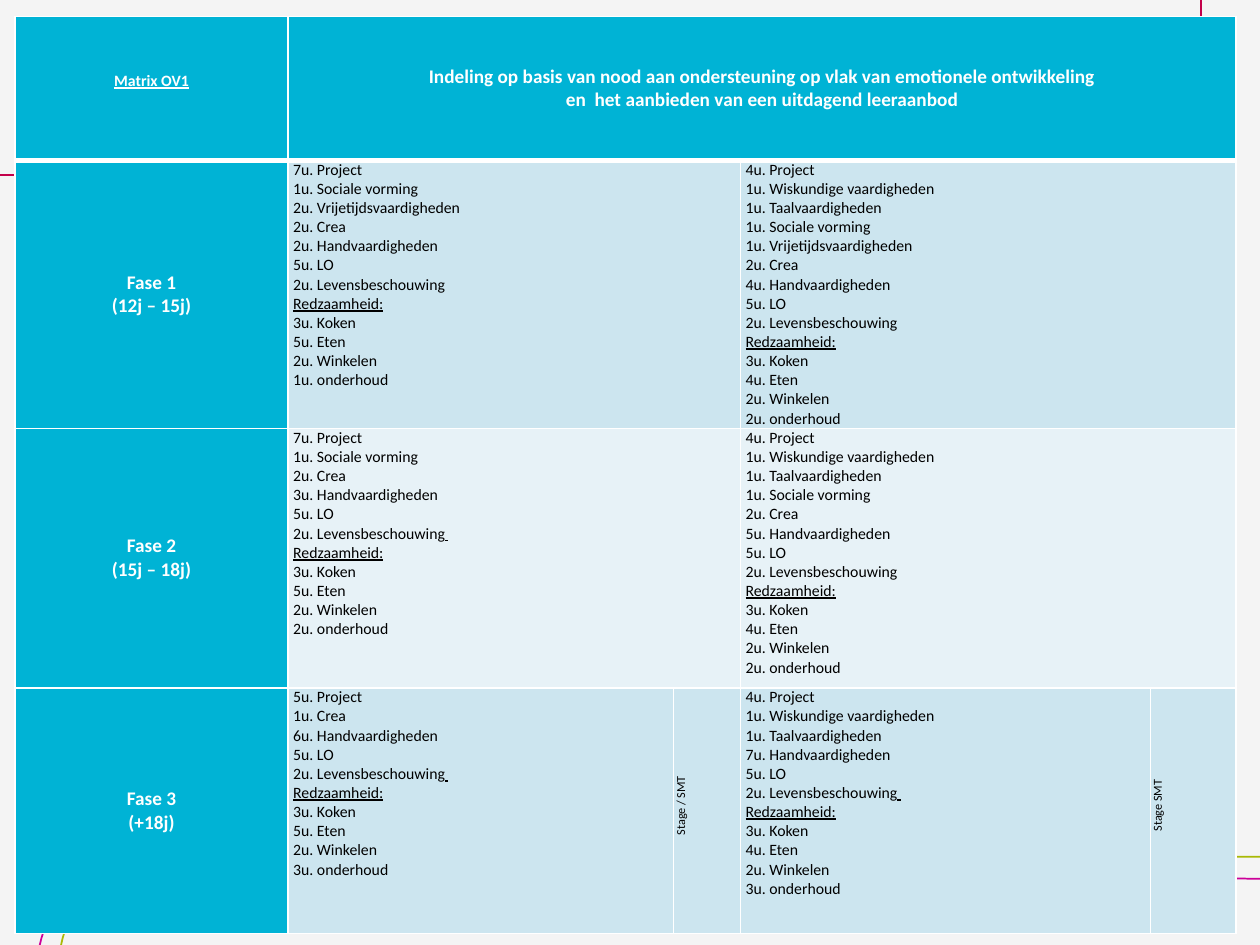
"""Build the OV1 matrix slide: a timetable per phase over decorative rails."""
from dataclasses import dataclass

from lxml import etree
from pptx import Presentation
from pptx.dml.color import RGBColor
from pptx.enum import text
from pptx.oxml.ns import qn
from pptx.util import Cm, Pt

COLORS = {
    "page": "F4F4F4", "head": "00B3D5", "band": "CCE5EF", "light": "E7F2F7",
    "white": "FFFFFF", "black": "000000",
    "magenta": "CC0099", "lime": "A9B905", "crimson": "C3004A",
}
COLUMNS = (5.51, 7.77, 1.35, 8.26, 1.73)
ROWS = (2.9, 5.23, 5.23, 4.95)
CARE = "Redzaamheid:"
FAITH = "5u. LO\v2u. Levensbeschouwing"
THEORY = ["4u. Project", "1u. Wiskundige vaardigheden", "1u. Taalvaardigheden"]
SOCIAL = "1u. Sociale vorming"


@dataclass
class Style:
    size: float
    color: str
    bold: bool = False
    centered: bool = True
    underlined: bool = False
    upright: bool = False


@dataclass
class Entry:
    row: int
    column: int
    lines: list[str]
    style: Style
    span: int = 1


@dataclass
class Rail:
    color: str
    start: tuple[float, float]
    bends: list[tuple[float, float]]
    end: tuple[float, float]


CORNER = Style(9, "white", bold=True, underlined=True)
HEADING = Style(11, "white", bold=True)
LESSONS = Style(9, "black", centered=False)
STAGE = Style(7, "black", upright=True)

RAILS = [
    Rail("magenta", (0.71, 22.63),
         [(0.76, 19.48), (0.76, 18.9), (0.99, 18.36), (1.42, 17.96),
          (1.83, 17.55), (2.39, 17.32), (2.97, 17.35)], (26.16, 17.73)),
    Rail("lime", (1.19, 22.63),
         [(1.19, 19.48), (1.19, 18.9), (1.42, 18.34), (1.83, 17.93),
          (2.24, 17.53), (2.79, 17.3), (3.38, 17.3)], (26.57, 17.27)),
    Rail("crimson", (24.21, -1.47),
         [(24.21, 1.45), (24.21, 2.01), (23.98, 2.51), (23.57, 2.9),
          (23.16, 3.28), (22.61, 3.51), (22.02, 3.51)], (-1.17, 3.53)),
]


def care(meals: int, upkeep: int) -> list[str]:
    """Return the self-reliance lessons."""
    return [CARE, "3u. Koken", f"{meals}u. Eten", "2u. Winkelen", f"{upkeep}u. onderhoud"]


ENTRIES = [
    Entry(0, 0, ["Matrix OV1"], CORNER),
    Entry(0, 1, ["Indeling op basis van nood aan ondersteuning op vlak van emotionele ontwikkeling",
                 "en  het aanbieden van een uitdagend leeraanbod"], HEADING, 4),
    Entry(1, 0, ["Fase 1", "(12j – 15j)"], HEADING),
    Entry(1, 1, ["7u. Project", SOCIAL, "2u. Vrijetijdsvaardigheden", "2u. Crea",
                 "2u. Handvaardigheden", FAITH, *care(5, 1)], LESSONS, 2),
    Entry(1, 3, [*THEORY, SOCIAL, "1u. Vrijetijdsvaardigheden", "2u. Crea",
                 "4u. Handvaardigheden", FAITH, *care(4, 2)], LESSONS, 2),
    Entry(2, 0, ["Fase 2", "(15j – 18j)"], HEADING),
    Entry(2, 1, ["7u. Project", SOCIAL, "2u. Crea", "3u. Handvaardigheden",
                 FAITH + " ", *care(5, 2)], LESSONS, 2),
    Entry(2, 3, [*THEORY, SOCIAL, "2u. Crea", "5u. Handvaardigheden",
                 FAITH, *care(4, 2)], LESSONS, 2),
    Entry(3, 0, ["Fase 3", "(+18j)"], HEADING),
    Entry(3, 1, ["5u. Project", "1u. Crea", "6u. Handvaardigheden",
                 FAITH + " ", *care(5, 3)], LESSONS),
    Entry(3, 2, ["Stage / SMT"], STAGE),
    Entry(3, 3, [*THEORY, "7u. Handvaardigheden", FAITH + " ", *care(4, 3)], LESSONS),
    Entry(3, 4, ["Stage SMT"], STAGE),
]


def rgb(name: str) -> RGBColor:
    """Return a named colour."""
    return RGBColor.from_string(COLORS[name])


def curve(points: list[tuple[float, float]], steps: int = 12) -> list[tuple[float, float]]:
    """Sample a cubic curve given by four points."""
    weights = [((1 - t) ** 3, 3 * t * (1 - t) ** 2, 3 * t * t * (1 - t), t ** 3)
               for t in (step / steps for step in range(1, steps + 1))]
    return [tuple(sum(w * point[axis] for w, point in zip(row, points)) for axis in (0, 1))
            for row in weights]


def draw_rail(page, rail: Rail) -> None:
    """Draw one rounded decorative line."""
    route = [rail.bends[0], *curve(rail.bends[:4]), *curve(rail.bends[3:]), rail.end]
    builder = page.shapes.build_freeform(*(Cm(value) for value in rail.start))
    builder.add_line_segments([(Cm(x), Cm(y)) for x, y in route], close=False)
    shape = builder.convert_to_shape()
    shape.shadow.inherit = False
    shape.fill.background()
    shape.line.color.rgb = rgb(rail.color)
    shape.line.width = Pt(1)


def draw_borders(cell, row: int) -> None:
    """Give a cell white borders, heavier below the heading row."""
    properties = cell._tc.get_or_add_tcPr()
    heavy = {0: "lnB", 1: "lnT"}.get(row)
    for side in ("lnL", "lnR", "lnT", "lnB"):
        line = etree.SubElement(properties, qn(f"a:{side}"), w=str(Pt(3 if side == heavy else 1)))
        fill = etree.SubElement(line, qn("a:solidFill"))
        etree.SubElement(fill, qn("a:srgbClr"), val=COLORS["white"])


def prepare_cell(cell, row: int, column: int) -> None:
    """Set the borders, fill and margins of a cell."""
    draw_borders(cell, row)
    body = "light" if row == 2 else "band"
    cell.fill.solid()
    cell.fill.fore_color.rgb = rgb("head" if row == 0 or column == 0 else body)
    cell.margin_left = cell.margin_right = Cm(0.1)
    cell.margin_top = cell.margin_bottom = Cm(0)


def write_entry(table, entry: Entry) -> None:
    """Write the paragraphs of one entry into its cell."""
    cell, style = table.cell(entry.row, entry.column), entry.style
    if entry.span > 1:
        cell.merge(table.cell(entry.row, entry.column + entry.span - 1))
    if style.centered:
        cell.vertical_anchor = text.MSO_ANCHOR.MIDDLE
    if style is CORNER:
        cell.margin_bottom = Cm(0.3)
    if style.upright:
        cell._tc.get_or_add_tcPr().set("vert", "vert270")
    frame = cell.text_frame
    for index, line in enumerate(entry.lines):
        para = frame.add_paragraph() if index else frame.paragraphs[0]
        para.text = line.rstrip()
        if line.endswith(" "):
            span = para.add_run()
            span.text = " "
            span.font.underline = True
        if style.upright:
            para._p.get_or_add_pPr().set("marL", str(Cm(0.2)))
        para.alignment = text.PP_ALIGN.CENTER if style.centered else text.PP_ALIGN.LEFT
        para.font.name = "Calibri"
        para.font.size = Pt(style.size)
        para.font.bold = style.bold
        para.font.underline = style.underlined or line == CARE
        para.font.color.rgb = rgb(style.color)


def draw_matrix(page) -> None:
    """Draw the timetable."""
    table = page.shapes.add_table(len(ROWS), len(COLUMNS), Cm(0.3), Cm(0.33),
                                  Cm(sum(COLUMNS)), Cm(sum(ROWS))).table
    table.first_row = table.horz_banding = False
    for column, width in zip(table.columns, COLUMNS):
        column.width = Cm(width)
    for row, height in enumerate(ROWS):
        table.rows[row].height = Cm(height)
        for column in range(len(COLUMNS)):
            prepare_cell(table.cell(row, column), row, column)
    for entry in ENTRIES:
        write_entry(table, entry)


def main() -> None:
    """Build and save the deck."""
    deck = Presentation()
    deck.slide_width, deck.slide_height = Cm(25.4), Cm(19.05)
    page = deck.slides.add_slide(deck.slide_layouts[6])
    page.background.fill.solid()
    page.background.fill.fore_color.rgb = rgb("page")
    for rail in RAILS:
        draw_rail(page, rail)
    draw_matrix(page)
    deck.save("out.pptx")


if __name__ == "__main__":
    main()
